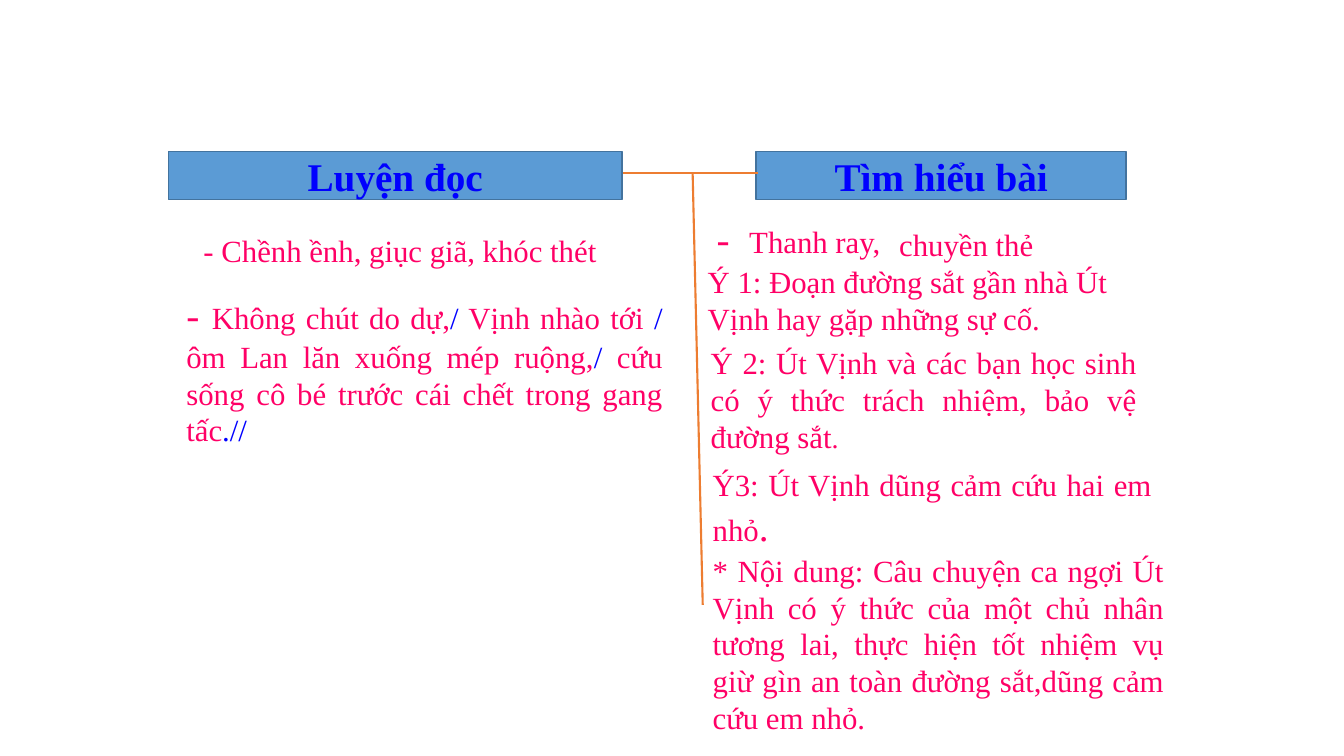
from pptx import Presentation
from pptx.dml.color import RGBColor
from pptx.enum.shapes import MSO_CONNECTOR, MSO_SHAPE
from pptx.enum.text import MSO_ANCHOR, MSO_AUTO_SIZE, PP_ALIGN
from pptx.oxml.ns import qn
from pptx.util import Inches, Pt
from lxml import etree

LEFT, CENTER, JUSTIFY = PP_ALIGN.LEFT, PP_ALIGN.CENTER, PP_ALIGN.JUSTIFY
RECTANGLE, STRAIGHT = MSO_SHAPE.RECTANGLE, MSO_CONNECTOR.STRAIGHT
MIDDLE, FIT = MSO_ANCHOR.MIDDLE, MSO_AUTO_SIZE.SHAPE_TO_FIT_TEXT

FONT = "Times New Roman"
COLORS = {"pink": "FF0066", "blue": "0000FF", "bar": "5B9BD5",
          "edge": "43739E", "branch": "ED7D31"}
BODY, LARGE, SMALL = 22, 28, 20
HEADER_TOP, HEADER_HEIGHT = 1.5, 0.48
DASH_SPACING = "350"

HEADERS = [("Luyện đọc", 1.67, 4.5), ("Tìm hiểu bài", 7.5, 3.67)]
BRANCHES = [((6.87, 1.72), (6.97, 6)), ((6.18, 1.72), (7.52, 1.72))]

NOTES = [
    ((1.92, 2.25, 4.27, 0.47), JUSTIFY, [("- Chềnh ềnh, giục giã, khóc thét", BODY, "pink")]),
    ((1.75, 2.83, 4.92, 1.68), JUSTIFY, [
        ("- ", LARGE, "pink"), ("Không chút do dự,", BODY, "pink"), ("/", BODY, "blue"),
        (" Vịnh nhào tới ", BODY, "pink"), ("/", BODY, "blue"),
        (" ôm Lan lăn xuống mép ruộng,", BODY, "pink"), ("/", BODY, "blue"),
        (" cứu sống cô bé trước cái chết trong gang tấc", BODY, "pink"),
        (".//", BODY, "blue")]),
    ((8.82, 2.19, 1.92, 0.47), JUSTIFY, [("chuyền thẻ", BODY, "pink")]),
    ((6.92, 2.56, 4.25, 0.84), LEFT, [
        ("Ý 1: Đoạn đường sắt gần nhà Út Vịnh hay gặp những sự cố.", BODY, "pink")]),
    ((6.95, 3.36, 4.42, 1.21), JUSTIFY, [
        ("Ý 2: Út Vịnh và các bạn học sinh có ý thức trách nhiệm, bảo vệ đường sắt", BODY, "pink"),
        (".", SMALL, "pink")]),
    ((6.97, 4.57, 4.55, 0.94), JUSTIFY, [
        ("Ý3: Út Vịnh dũng cảm cứu hai em nhỏ", BODY, "pink"), (". ", LARGE, "pink")]),
    ((6.97, 5.42, 4.67, 1.95), JUSTIFY, [
        ("* Nội dung: Câu chuyện ca ngợi Út Vịnh có ý thức của một chủ nhân tương lai, "
         "thực hiện tốt nhiệm vụ giừ gìn an toàn đường sắt,dũng cảm cứu em nhỏ.", BODY, "pink")]),
]
VOCABULARY = ((7.01, 2.08, 1.87, 0.57), JUSTIFY,
              [("- ", LARGE, "pink"), ("Thanh ray,", BODY, "pink")])


def color(name):
    return RGBColor.from_string(COLORS[name])


def add_span(para, text, size, tint, bold=False):
    span = para.add_run()
    span.text = text
    span.font.name = FONT
    span.font.size = Pt(size)
    span.font.bold = bold
    span.font.color.rgb = color(tint)
    return span


def add_header(page, text, left, width):
    bar = page.shapes.add_shape(RECTANGLE, Inches(left), Inches(HEADER_TOP),
                                Inches(width), Inches(HEADER_HEIGHT))
    bar.shadow.inherit = False
    bar.fill.solid()
    bar.fill.fore_color.rgb = color("bar")
    bar.line.color.rgb = color("edge")
    bar.line.width = Pt(1)
    bar.text_frame.vertical_anchor = MIDDLE
    para = bar.text_frame.paragraphs[0]
    para.alignment = CENTER
    add_span(para, text, LARGE, "blue", bold=True)


def add_branch(page, start, end):
    branch = page.shapes.add_connector(STRAIGHT, *map(Inches, start + end))
    branch.line.color.rgb = color("branch")
    branch.line.width = Pt(1.5)
    etree.SubElement(branch._element.spPr, qn("a:effectLst"))


def add_note(page, place, alignment, spans, wrap=True):
    box = page.shapes.add_textbox(*map(Inches, place))
    box.text_frame.word_wrap = wrap
    box.text_frame.auto_size = FIT
    para = box.text_frame.paragraphs[0]
    para.alignment = alignment
    return [add_span(para, *span) for span in spans]


def main():
    deck = Presentation()
    deck.slide_width, deck.slide_height = Inches(13.33), Inches(7.5)
    page = deck.slides.add_slide(deck.slide_layouts[6])
    for header in HEADERS:
        add_header(page, *header)
    for branch in BRANCHES:
        add_branch(page, *branch)
    for note in NOTES:
        add_note(page, *note)
    dash = add_note(page, *VOCABULARY, wrap=False)[0]
    dash.font._element.set("spc", DASH_SPACING)
    deck.save("out.pptx")


if __name__ == "__main__":
    main()
